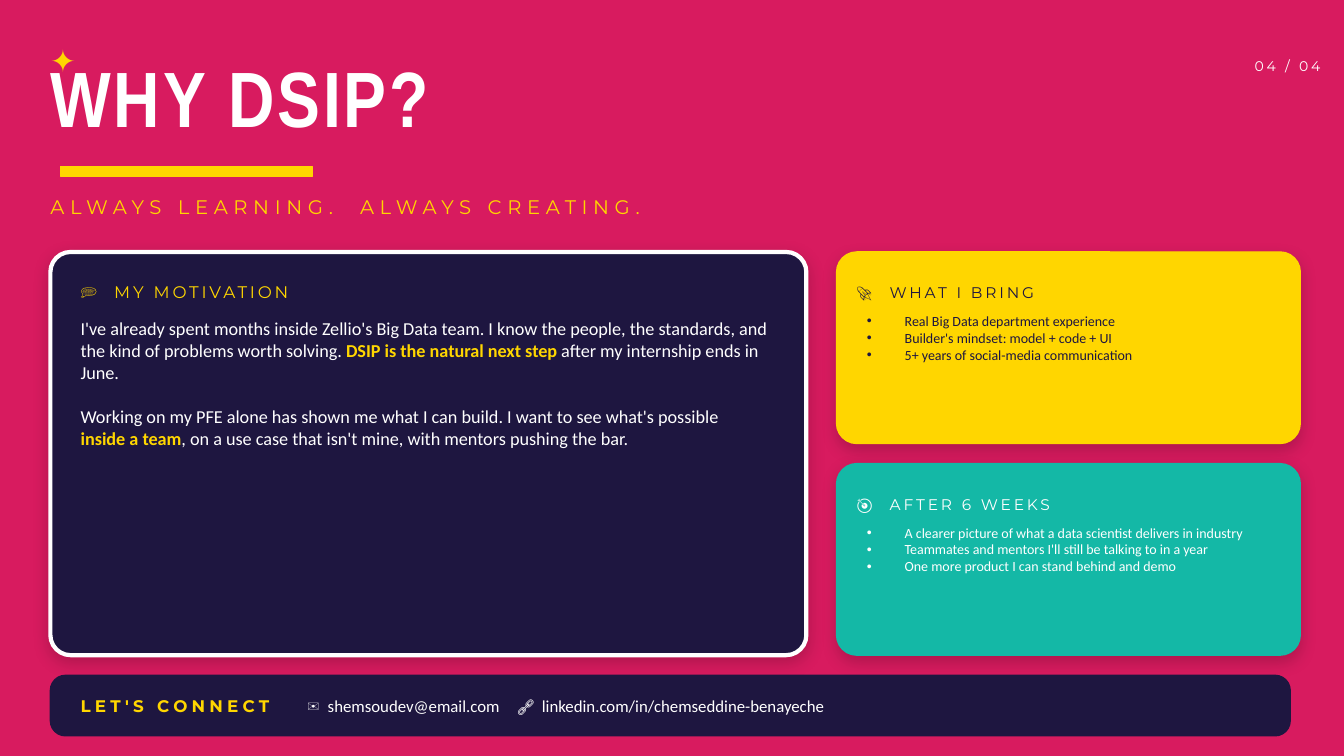
from lxml.etree import SubElement as Sub
from pptx import Presentation
from pptx.dml.color import RGBColor
from pptx.enum.shapes import MSO_SHAPE as Kind
from pptx.enum.text import MSO_ANCHOR as Anchor, MSO_AUTO_SIZE as Fit, PP_ALIGN as Align
from pptx.oxml.ns import qn
from pptx.util import Pt

PINK = RGBColor(0xD8, 0x1B, 0x5F)
GOLD = RGBColor(0xFF, 0xD6, 0x00)
NAVY = RGBColor(0x1E, 0x16, 0x40)
TEAL = RGBColor(0x14, 0xB8, 0xA6)
WHITE = RGBColor(0xFF, 0xFF, 0xFF)
BLACK = RGBColor(0, 0, 0)

HEAD, LABEL, BODY = "Arial Narrow", "Montserrat", "Calibri"


def style(name, size, color, bold=False, spc=0):
    return dict(name=name, size=Pt(size), bold=bold), color, spc


class Deck:
    """Holds the current slide and draws styled elements on it, in points."""

    def __init__(self, prs, layout, back):
        self.slide = prs.slides.add_slide(prs.slide_layouts[layout])
        self.shapes = self.slide.shapes
        self.holders = list(self.slide.placeholders)
        fill = self.slide.background.fill
        fill.solid()
        fill.fore_color.rgb = back

    def block(self, kind, box, fill, line=None, width=1, radius=0):
        shape = self.shapes.add_shape(kind, *map(Pt, box))
        if radius:
            shape.adjustments[0] = radius / box[3]
        shape.fill.solid()
        shape.fill.fore_color.rgb = fill
        shape.line.color.rgb = line or fill
        shape.line.width = Pt(width)
        shape.shadow.inherit = False
        return shape

    def card(self, box, fill, line=None, width=1):
        """Rounded panel with a soft shadow below it."""
        shape = self.block(Kind.ROUNDED_RECTANGLE, box, fill, line, width, 14.4)
        glow = shape.element.spPr.find(qn("a:effectLst"))
        shade = Sub(glow, qn("a:outerShdw"), blurRad=str(Pt(12)), dist=str(Pt(4)),
                    dir="5400000", algn="t", rotWithShape="0")
        tint = Sub(shade, qn("a:srgbClr"), val=str(BLACK))
        Sub(tint, qn("a:alpha"), val="18000")

    def text(self, box, paras, holder=None, anchor=Anchor.MIDDLE, align=Align.LEFT,
             inset=(0, 0), gaps=(), tabs=(), bullet=False):
        """Writes paragraphs, each a list of (words, style) runs."""
        if holder is None:
            shape = self.shapes.add_textbox(*map(Pt, box))
        else:
            shape = self.holders[holder]
            shape.element.getparent().append(shape.element)
            for key, val in zip(("left", "top", "width", "height"), box):
                setattr(shape, key, Pt(val))
        frame = shape.text_frame
        side, edge = map(Pt, inset)
        form = dict(word_wrap=True, auto_size=Fit.NONE, vertical_anchor=anchor,
                    margin_left=side, margin_right=side,
                    margin_top=edge, margin_bottom=edge)
        for key, val in form.items():
            setattr(frame, key, val)
        for i, runs in enumerate(paras):
            para = frame.add_paragraph() if i else frame.paragraphs[0]
            para.alignment = align
            para.space_before = Pt(gaps[i] if gaps else 0)
            prop = para._p.get_or_add_pPr()
            if bullet:
                prop.set("marL", str(Pt(27)))
                prop.set("indent", str(-Pt(27)))
                Sub(prop, qn("a:buChar"), char="•")
            if tabs:
                stops = Sub(prop, qn("a:tabLst"))
                for pos in tabs:
                    Sub(stops, qn("a:tab"), pos=str(Pt(pos)), algn="l")
            for words, look in runs:
                self.run(para, words, look)

    def run(self, para, words, look):
        form, color, spc = look
        run = para.add_run()
        run.text = words
        for key, val in form.items():
            setattr(run.font, key, val)
        run.font.color.rgb = color
        if spc:
            run.font._element.set("spc", str(spc * 100))

    def side(self, top, fill, ink, head, items, holder):
        """Right-hand card with a heading and a bullet list."""
        left = 597.6
        self.card((left, top, 331.2, 136.8), fill)
        self.text((left + 14.4, top + 14.4, 302.4, 28.8),
                  [[(head, style(LABEL, 11, ink, spc=2))]], tabs=[23.5])
        look = style(BODY, 10, ink)
        self.text((left + 21.6, top + 43.2, 295.2, 93.6),
                  [[(item, look)] for item in items],
                  holder, Anchor.TOP, bullet=True)


def main():
    prs = Presentation()
    prs.slide_width, prs.slide_height = Pt(960), Pt(540)
    deck = Deck(prs, 3, PINK)

    deck.text((28.8, 28.8, 28.8, 28.8), [[("✦", style(BODY, 22, GOLD, True))]],
              inset=(7.2, 3.6))
    deck.text((36, 28.8, 648, 79.2),
              [[("WHY DSIP?", style(HEAD, 56, WHITE, True, 2))]], holder=0)
    deck.block(Kind.RECTANGLE, (43.2, 118.8, 180, 7.2), GOLD)
    deck.text((36, 133.2, 648, 28.8),
              [[("ALWAYS LEARNING.  ALWAYS CREATING.", style(LABEL, 14, GOLD, spc=4))]])
    deck.text((878.4, 36, 64.8, 21.6),
              [[("04 / 04", style(LABEL, 10, WHITE, spc=2))]], align=Align.RIGHT)

    deck.card((36, 180, 540, 288), NAVY, WHITE, 3)
    deck.text((57.6, 194.4, 504, 28.8),
              [[("💭\tMY MOTIVATION", style(LABEL, 12, GOLD, spc=2))]], tabs=[24])
    plain, key = style(BODY, 13, WHITE), style(BODY, 13, GOLD, True)
    deck.text((57.6, 226.8, 496.8, 237.6), [
        [("I've already spent months inside Zellio's Big Data team. I know the people, "
          "the standards, and the kind of problems worth solving. ", plain),
         ("DSIP is the natural next step", key),
         (" after my internship ends in June.", plain)],
        [("Working on my PFE alone has shown me what I can build. "
          "I want to see what's possible", plain)],
        [("inside a team", key),
         (", on a use case that isn't mine, with mentors pushing the bar.", plain)],
    ], anchor=Anchor.TOP, gaps=(0, 15.8, 0))

    deck.side(180, GOLD, NAVY, "🚀\tWHAT I BRING", [
        "Real Big Data department experience",
        "Builder's mindset: model + code + UI",
        "5+ years of social-media communication"], 1)
    deck.side(331.2, TEAL, WHITE, "🎯\tAFTER 6 WEEKS", [
        "A clearer picture of what a data scientist delivers in industry",
        "Teammates and mentors I'll still be talking to in a year",
        "One more product I can stand behind and demo"], 2)

    deck.block(Kind.ROUNDED_RECTANGLE, (36, 482.4, 885.6, 43.2), NAVY, radius=10.8)
    deck.text((57.6, 482.4, 864, 43.2), [
        [("LET'S CONNECT", style(LABEL, 12, GOLD, True, 3)),
         ("\t✉\tshemsoudev@email.com\t🔗\tlinkedin.com/in/chemseddine-benayeche",
          style(BODY, 12, WHITE))],
    ], tabs=[162, 176.5, 312, 329.5])

    prs.save("out.pptx")


if __name__ == "__main__":
    main()
